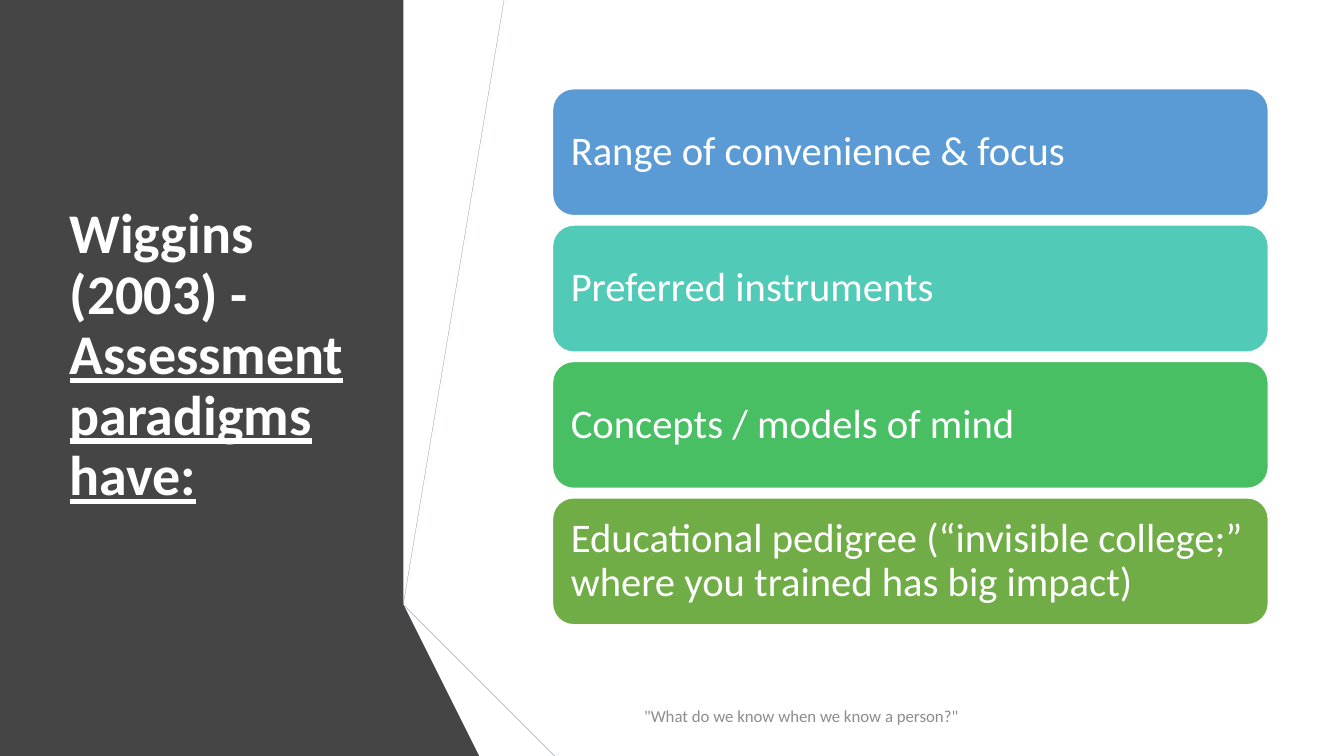
from pptx import Presentation
from pptx.dml.color import RGBColor
from pptx.enum.shapes import MSO_SHAPE
from pptx.enum.text import MSO_ANCHOR, MSO_AUTO_SIZE, PP_ALIGN
from pptx.util import Inches, Pt

ROUND = MSO_SHAPE.ROUNDED_RECTANGLE
MIDDLE = MSO_ANCHOR.MIDDLE
FIXED = MSO_AUTO_SIZE.NONE
LEFT = PP_ALIGN.LEFT

THEME = {
    "font": "Calibri",
    "white": "FFFFFF", "panel": "454545", "note": "8C8C8C",
    "title_size": 40, "bar_size": 29, "note_size": 12,
}
W, H = 13.33, 7.5


def paint(shape, color):
    shape.shadow.inherit = False
    shape.fill.solid()
    shape.fill.fore_color.rgb = RGBColor.from_string(color)
    shape.line.fill.background()


def write(shape, runs, size, color, inset=(0.1, 0.05), space=None):
    """Fill a shape with one left-aligned paragraph of (text, format) runs."""
    frame = shape.text_frame
    sides = {"margin_left": inset[0], "margin_right": inset[0],
             "margin_top": inset[1], "margin_bottom": inset[1]}
    for name, value in sides.items():
        setattr(frame, name, Inches(value))
    frame.word_wrap = True
    frame.auto_size = FIXED
    frame.vertical_anchor = MIDDLE
    para = frame.paragraphs[0]
    para.alignment = LEFT
    if space:
        para.line_spacing = space
    for text, style in runs:
        run = para.add_run()
        run.text = text
        look = {"name": THEME["font"], "size": Pt(size), **style}
        for name, value in look.items():
            setattr(run.font, name, value)
        run.font.color.rgb = RGBColor.from_string(color)


deck = Presentation()
deck.slide_width, deck.slide_height = Inches(W), Inches(H)
slide = deck.slides.add_slide(deck.slide_layouts[5])
shapes = slide.shapes

# Dark panel and the folded ribbons along its edge
ribbons = [
    (THEME["panel"], [(0, 0), (4.49, 0), (3.56, 5.75), (4.82, H), (0, H)]),
    ("4472C4", [(3.96, 5.78), (4.23, 5.83), (5.19, 0), (4.91, 0)]),
    ("595959", [(4.85, 0), (4.57, 0), (3.63, 5.73), (3.9, 5.77)]),
    ("262626", [(3.63, 5.73), (4.91, H), (4.97, H)]),
    ("203864", [(3.96, 5.79), (5.54, H), (5.6, H)]),
    ("2F5597", [(3.96, 5.78), (3.96, 5.79), (5.6, H), (6.29, H), (4.23, 5.83)]),
    ("404040", [(3.63, 5.73), (4.97, H), (5.48, H), (3.95, 5.83),
                (3.89, 5.78), (3.9, 5.77)]),
]
for color, points in ribbons:
    path = shapes.build_freeform(*points[0], scale=Inches(1))
    path.add_line_segments(points[1:], close=True)
    paint(path.convert_to_shape(), color)

# Title, brought in front of the panel
title = shapes.title
shapes._spTree.append(title._element)
box = {"left": 0.59, "top": 0.1 * H, "width": 3.04, "height": 5.58}
for name, value in box.items():
    setattr(title, name, Inches(value))
write(title, [("Wiggins (2003) - ", {"bold": True}),
              ("Assessment paradigms have:", {"bold": True, "underline": True})],
      THEME["title_size"], THEME["white"], space=0.9)

# Footer line
note = shapes.add_textbox(Inches(6.29), Inches(6.9), Inches(4.26), Inches(0.4))
write(note, [('"What do we know when we know a person?"', {})],
      THEME["note_size"], THEME["note"])

# Stack of bars at an even pitch
bars = [
    ("Range of convenience & focus", "5B9BD5"),
    ("Preferred instruments", "52CAB8"),
    ("Concepts / models of mind", "49BF64"),
    ("Educational pedigree (“invisible college;” where you trained has big impact)",
     "70AD47"),
]
TOP, PITCH = 0.88, 1.353
for row, (text, color) in enumerate(bars):
    bar = shapes.add_shape(ROUND, Inches(5.48), Inches(TOP + row * PITCH),
                           Inches(7.1), Inches(1.26))
    paint(bar, color)
    bar.line.color.rgb = RGBColor.from_string(THEME["white"])
    bar.line.width = Pt(1)
    write(bar, [(text, {})], THEME["bar_size"], THEME["white"],
          inset=(0.12, 0.12), space=0.9)

deck.save("out.pptx")
